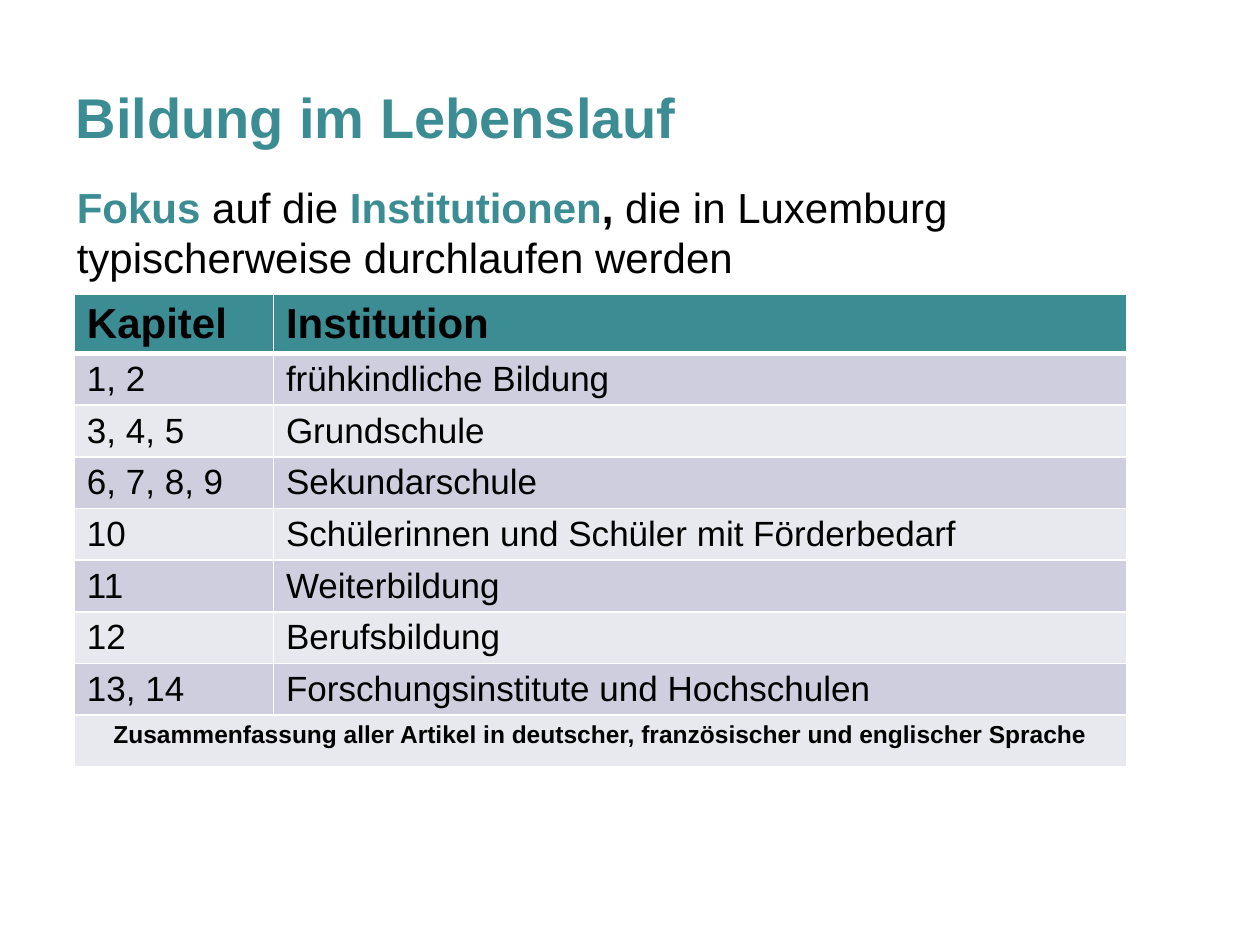
from lxml import etree
from pptx import Presentation
from pptx.dml.color import RGBColor
from pptx.enum.text import MSO_ANCHOR, MSO_AUTO_SIZE, PP_ALIGN
from pptx.oxml.ns import qn
from pptx.util import Inches, Pt

LEFT, CENTER = PP_ALIGN.LEFT, PP_ALIGN.CENTER
MIDDLE, TOP = MSO_ANCHOR.MIDDLE, MSO_ANCHOR.TOP
NO_FIT = MSO_AUTO_SIZE.NONE

TEAL = RGBColor(0x3C, 0x8C, 0x93)
BLACK = RGBColor(0, 0, 0)
WHITE = RGBColor(255, 255, 255)
DARK_BAND = RGBColor(0xCE, 0xCE, 0xDE)
LIGHT_BAND = RGBColor(0xE8, 0xE8, 0xEF)

WIDTH, HEIGHT = 10, 7.5
FONT = "Arial"
COLUMNS = (1.58, 6.77)
ROW_HEIGHT = 0.41

CHAPTERS = [
    ("Kapitel", "Institution"),
    ("1, 2", "frühkindliche Bildung"),
    ("3, 4, 5", "Grundschule"),
    ("6, 7, 8, 9", "Sekundarschule"),
    ("10", "Schülerinnen und Schüler mit Förderbedarf"),
    ("11", "Weiterbildung"),
    ("12", "Berufsbildung"),
    ("13, 14", "Forschungsinstitute und Hochschulen"),
    ("Zusammenfassung aller Artikel in deutscher, französischer "
     "und englischer Sprache", ""),
]


class SlideBuilder:
    """Holds the style and the current slide; places by shares of its size."""

    def __init__(self, deck):
        self.slide = deck.slides.add_slide(deck.slide_layouts[1])

    def place(self, shape, left, top, width, height):
        shape.left, shape.width = Inches(left * WIDTH), Inches(width * WIDTH)
        shape.top, shape.height = Inches(top * HEIGHT), Inches(height * HEIGHT)

    def style(self, span, size, color=BLACK, bold=False):
        font = span.font
        font.name, font.size, font.bold = FONT, Pt(size), bold
        font.color.rgb = color

    def prepare(self, shape, area, anchor):
        self.place(shape, *area)
        frame = shape.text_frame
        frame.word_wrap, frame.auto_size = True, NO_FIT
        frame.vertical_anchor = anchor
        para = frame.paragraphs[0]
        para.alignment = LEFT
        return para

    def title(self, text, area):
        para = self.prepare(self.slide.shapes.title, area, MIDDLE)
        para.text = text
        self.style(para.runs[0], 32, TEAL, True)

    def body(self, spans, area):
        para = self.prepare(self.slide.placeholders[1], area, TOP)
        para.space_before = Pt(0)
        properties = para._p.get_or_add_pPr()
        properties.set("marL", "0")
        properties.set("indent", "0")
        etree.SubElement(properties, qn("a:buNone"))
        for text, color, bold in spans:
            span = para.add_run()
            span.text = text
            self.style(span, 24, color, bold)

    def borders(self, cell, **widths):
        properties = cell._tc.get_or_add_tcPr()
        for side in "LRTB":
            line = etree.SubElement(properties, qn(f"a:ln{side}"),
                                    w=str(Pt(widths.get(side, 1))))
            fill = etree.SubElement(line, qn("a:solidFill"))
            etree.SubElement(fill, qn("a:srgbClr"), val=str(WHITE))

    def table(self, rows, left, top):
        last = len(rows) - 1
        table = self.slide.shapes.add_table(
            len(rows), len(COLUMNS), Inches(left * WIDTH), Inches(top * HEIGHT),
            Inches(sum(COLUMNS)), Inches(ROW_HEIGHT * len(rows))).table
        for column, width in zip(table.columns, COLUMNS):
            column.width = Inches(width)
        for index, texts in enumerate(rows):
            table.rows[index].height = Inches(ROW_HEIGHT)
            band = DARK_BAND if index % 2 else LIGHT_BAND
            size = {0: 24, last: 14}.get(index, 20)
            for cell, text in zip(table.rows[index].cells, texts):
                # The header is set off by a thicker rule
                self.borders(cell, T=3 if index == 1 else 1,
                             B=3 if index == 0 else 1)
                cell.fill.solid()
                cell.fill.fore_color.rgb = band if index else TEAL
                para = cell.text_frame.paragraphs[0]
                para.text = text
                for span in para.runs:
                    self.style(span, size, bold=index in (0, last))

        # Closing row runs across both columns
        closing = table.cell(last, 0)
        closing.merge(table.cell(last, 1))
        closing.text_frame.paragraphs[0].alignment = CENTER


def main():
    deck = Presentation()
    deck.slide_width, deck.slide_height = Inches(WIDTH), Inches(HEIGHT)
    builder = SlideBuilder(deck)

    # Heading and focus statement
    builder.title("Bildung im Lebenslauf", (0.05, 0.04, 0.9, 1 / 6))
    builder.body([
        ("Fokus ", TEAL, True),
        ("auf die ", BLACK, False),
        ("Institutionen", TEAL, True),
        (", ", BLACK, True),
        ("die in Luxemburg typischerweise durchlaufen werden", BLACK, False),
    ], (0.051, 0.185, 0.9, 0.125))

    # Chapters by institution
    builder.table(CHAPTERS, 0.059, 0.311)
    deck.save("out.pptx")


if __name__ == "__main__":
    main()
